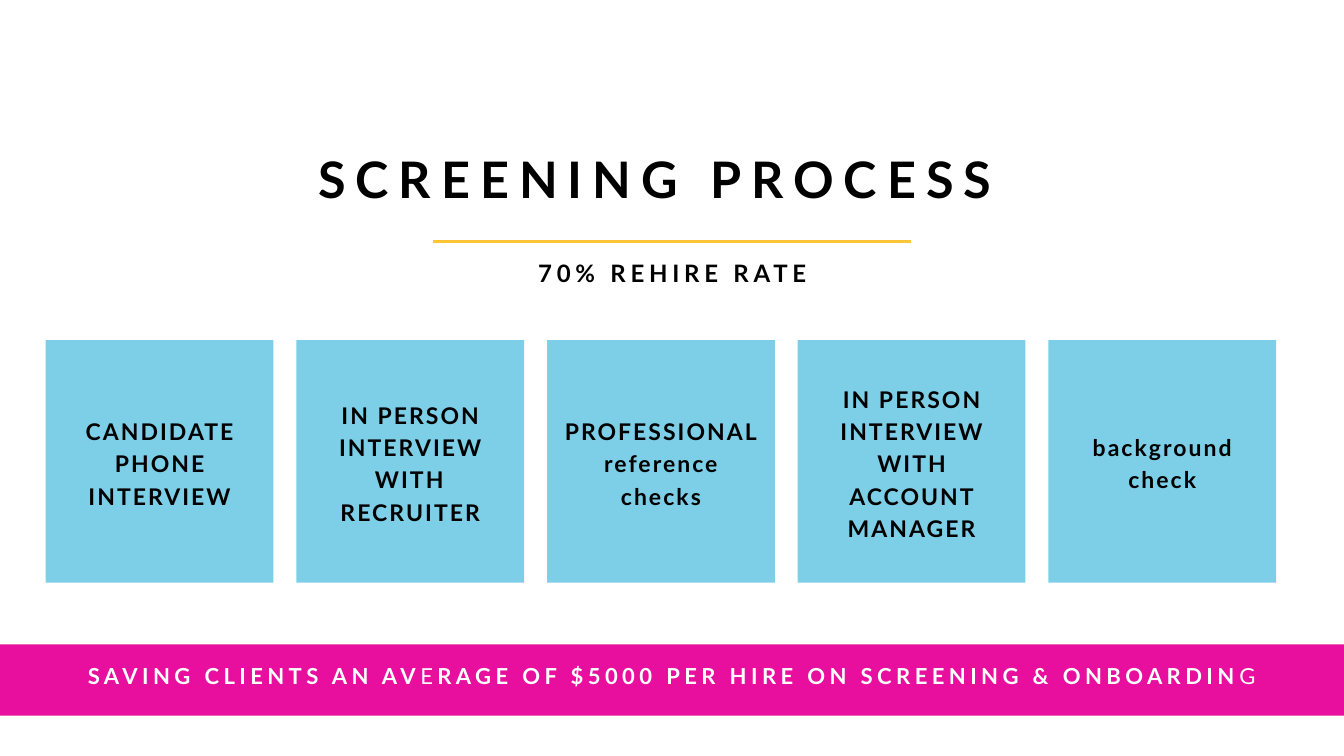
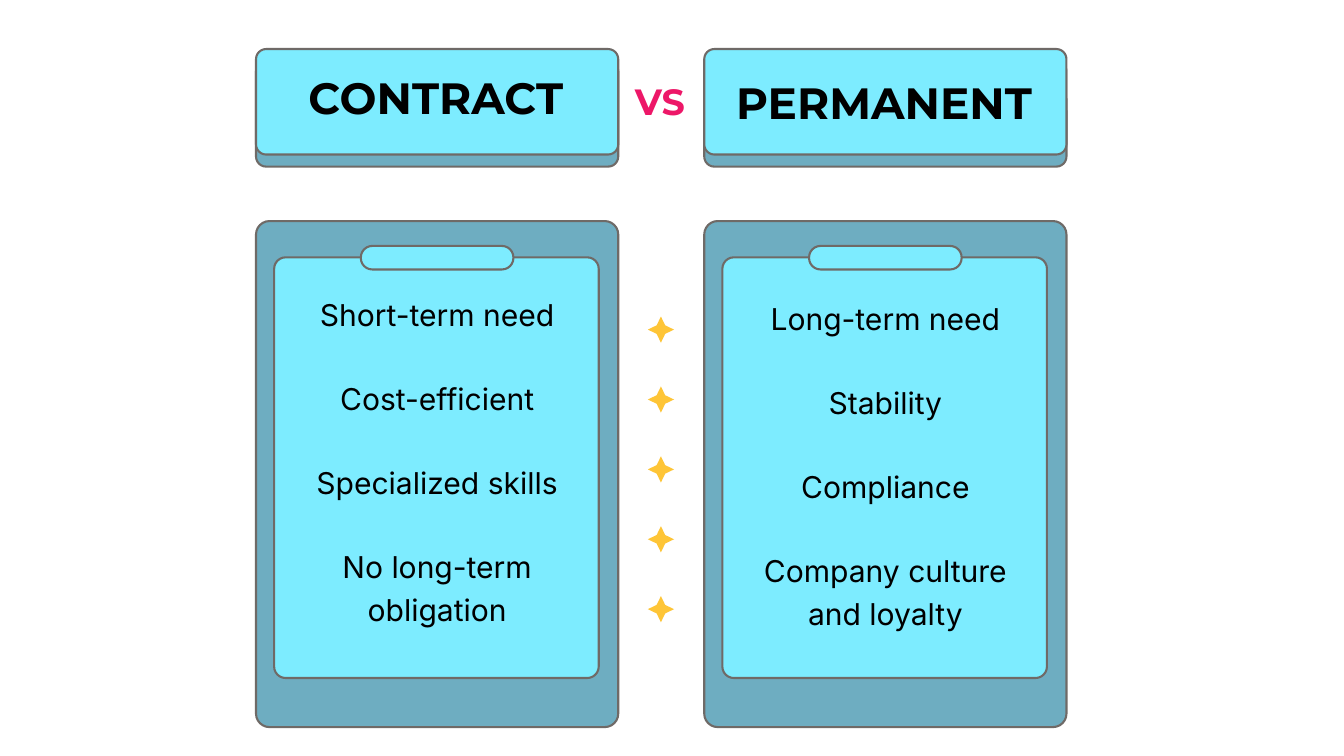
"""Build two recruiting slides: the screening process, and contract versus permanent hiring."""

from dataclasses import dataclass, replace

from lxml.etree import SubElement
from pptx import Presentation
from pptx.dml.color import RGBColor
from pptx.enum.shapes import MSO_CONNECTOR, MSO_SHAPE
from pptx.enum.text import MSO_ANCHOR, MSO_AUTO_SIZE, PP_ALIGN
from pptx.oxml.ns import qn
from pptx.presentation import Presentation as Deck
from pptx.shapes.autoshape import Shape
from pptx.slide import Slide
from pptx.text.text import TextFrame
from pptx.util import Inches, Pt

BLACK = RGBColor(0x00, 0x00, 0x00)
WHITE = RGBColor(0xFF, 0xFF, 0xFF)
CARD_BLUE = RGBColor(0x7D, 0xCE, 0xE7)
PANEL_BLUE = RGBColor(0x6E, 0xAD, 0xC1)
PAGE_CYAN = RGBColor(0x7D, 0xEC, 0xFF)
OUTLINE_GREY = RGBColor(0x6F, 0x6A, 0x67)
GOLD = RGBColor(0xFE, 0xC5, 0x37)
MAGENTA = RGBColor(0xE8, 0x0E, 0x9E)
VERSUS_PINK = RGBColor(0xED, 0x17, 0x68)

TITLE_SLIDE_LAYOUT = 0
COMPARISON_LAYOUT = 4


@dataclass(frozen=True)
class Box:
    """A position and size in inches."""

    left: float
    top: float
    width: float
    height: float


@dataclass(frozen=True)
class TextStyle:
    """Character and paragraph settings, with sizes in points."""

    font: str
    size: float
    line: float
    color: RGBColor = BLACK
    bold: bool = True
    tracking: float = 0
    gap: float = 0


@dataclass(frozen=True)
class Option:
    """One column of the comparison."""

    left: float
    heading: str
    heading_top: float
    points: tuple[str, ...]
    points_top: float


TITLE = TextStyle("Lato", 53.9, 75.4, tracking=10.8)
SUBTITLE = TextStyle("Lato", 25.7, 36, tracking=5.1)
STEP = TextStyle("Lato", 24.6, 34.5, tracking=2.2)
BANNER = TextStyle("Lato", 23.6, 33.1, WHITE, tracking=4.7)
HEADING = TextStyle("Montserrat", 46.9, 53.5)
VERSUS = TextStyle("Montserrat", 39.1, 44.5, VERSUS_PINK)
POINTS = TextStyle("Inter", 32.2, 45.1, bold=False, gap=45.1)

STEPS = (
    "CANDIDATE\nPHONE\nINTERVIEW",
    "IN PERSON\nINTERVIEW\nWITH RECRUITER",
    "PROFESSIONAL\nreference\nchecks",
    "IN PERSON\nINTERVIEW\nWITH\nACCOUNT\nMANAGER",
    "background\ncheck",
)
BANNER_PARTS = (
    ("SAVING CLIENTS AN AV", True),
    ("E", False),
    ("RAGE OF $5000 PER HIRE ON SCREENING & ONBOARDIN", True),
    ("G", False),
)
OPTIONS = (
    Option(
        3.81, "CONTRACT", 1.09,
        ("Short-term need", "Cost-efficient", "Specialized skills", "No long-term obligation"),
        4.32,
    ),
    Option(
        10.48, "PERMANENT", 1.17,
        ("Long-term need", "Stability", "Compliance", "Company culture and loyalty"),
        4.38,
    ),
)
STAR_COUNT = 5


def place(shape: Shape, box: Box) -> None:
    """Move and size a shape."""
    shape.left, shape.top = Inches(box.left), Inches(box.top)
    shape.width, shape.height = Inches(box.width), Inches(box.height)


def format_run(run, style: TextStyle) -> None:
    """Apply the character settings of a style."""
    run.font.name = style.font
    run.font.size = Pt(style.size)
    run.font.bold = style.bold
    run.font.color.rgb = style.color
    run._r.get_or_add_rPr().set("spc", str(round(style.tracking * 100)))


def format_text(
    text_frame: TextFrame, style: TextStyle, anchor: MSO_ANCHOR = MSO_ANCHOR.TOP, inset: float = 0
) -> None:
    """Centre the text of a frame and apply a style to it."""
    text_frame.word_wrap = True
    text_frame.auto_size = MSO_AUTO_SIZE.NONE
    text_frame.vertical_anchor = anchor
    text_frame.margin_left = text_frame.margin_right = Inches(inset)
    text_frame.margin_top = text_frame.margin_bottom = Inches(inset)
    for index, paragraph in enumerate(text_frame.paragraphs):
        paragraph.alignment = PP_ALIGN.CENTER
        paragraph.line_spacing = Pt(style.line)
        paragraph.space_before = Pt(style.gap if index else 0)
        paragraph.space_after = Pt(0)
        for run in paragraph.runs:
            format_run(run, style)


def fill_placeholder(slide: Slide, index: int, text: str, box: Box, style: TextStyle) -> None:
    """Fill a placeholder, move it and bring it to the front without bullets."""
    placeholder = slide.placeholders[index]
    place(placeholder, box)
    placeholder.text_frame.text = text
    format_text(placeholder.text_frame, style)
    for paragraph in placeholder.text_frame.paragraphs:
        properties = paragraph._p.get_or_add_pPr()
        properties.set("marL", "0")
        properties.set("indent", "0")
        SubElement(properties, qn("a:buNone"))
    placeholder.element.getparent().append(placeholder.element)


def add_block(
    slide: Slide, kind: MSO_SHAPE, box: Box, fill: RGBColor, outline: RGBColor | None = None
) -> Shape:
    """Add a flat preset shape."""
    shape = slide.shapes.add_shape(kind, 0, 0, 0, 0)
    place(shape, box)
    shape.shadow.inherit = False
    shape.fill.solid()
    shape.fill.fore_color.rgb = fill
    if outline is None:
        shape.line.fill.background()
    else:
        shape.line.color.rgb = outline
        shape.line.width = Pt(2.25)
    return shape


def add_rounded(slide: Slide, box: Box, fill: RGBColor, radius: float) -> None:
    """Add an outlined rectangle with a corner radius in inches."""
    shape = add_block(slide, MSO_SHAPE.ROUNDED_RECTANGLE, box, fill, OUTLINE_GREY)
    shape.adjustments[0] = radius / min(box.width, box.height)


def add_rule(slide: Slide, left: float, right: float, top: float) -> None:
    """Add the gold rule below the title."""
    rule = slide.shapes.add_connector(
        MSO_CONNECTOR.STRAIGHT, Inches(left), Inches(top), Inches(right), Inches(top)
    )
    rule.line.color.rgb = GOLD
    rule.line.width = Pt(3)
    SubElement(rule.element.spPr, qn("a:effectLst"))


def add_banner(slide: Slide) -> None:
    """Add the magenta band with its savings message."""
    add_block(slide, MSO_SHAPE.RECTANGLE, Box(-0.49, 9.59, 20.97, 1.06), MAGENTA)
    message = slide.shapes.add_textbox(0, 0, 0, 0)
    place(message, Box(-0.49, 9.39, 20.97, 1.26))
    paragraph = message.text_frame.paragraphs[0]
    for text, _ in BANNER_PARTS:
        paragraph.add_run().text = text
    format_text(message.text_frame, BANNER, MSO_ANCHOR.MIDDLE, 0.06)
    for run, (_, bold) in zip(paragraph.runs, BANNER_PARTS):
        format_run(run, replace(BANNER, bold=bold))


def build_screening_slide(presentation: Deck) -> None:
    """Build the slide with the five screening steps."""
    slide = presentation.slides.add_slide(presentation.slide_layouts[TITLE_SLIDE_LAYOUT])
    for index, step in enumerate(STEPS):
        box = Box(0.68 + 3.73 * index, 5.06, 3.39, 3.61)
        card = add_block(slide, MSO_SHAPE.RECTANGLE, box, CARD_BLUE)
        card.text_frame.text = step
        format_text(card.text_frame, STEP, MSO_ANCHOR.MIDDLE, 0.14)
    add_rule(slide, 6.45, 13.55, 3.59)
    add_banner(slide)
    fill_placeholder(slide, 0, "SCREENING PROCESS", Box(3.84, 2.06, 11.82, 0.99), TITLE)
    fill_placeholder(slide, 1, "70% REHIRE RATE", Box(7.77, 3.78, 4.47, 0.49), SUBTITLE)


def add_option(slide: Slide, option: Option, heading_index: int) -> None:
    """Add a heading button and a clipboard with the points of one option."""
    left = option.left
    add_rounded(slide, Box(left, 3.29, 5.39, 7.53), PANEL_BLUE, 0.2)
    add_rounded(slide, Box(left + 0.27, 3.83, 4.83, 6.26), PAGE_CYAN, 0.17)
    add_rounded(slide, Box(left + 1.56, 3.66, 2.27, 0.35), PAGE_CYAN, 0.17)
    for top, fill in ((0.91, PANEL_BLUE), (0.73, PAGE_CYAN)):
        add_rounded(slide, Box(left, top, 5.39, 1.57), fill, 0.15)
    heading_box = Box(left + 0.26, option.heading_top, 4.83, 0.75)
    fill_placeholder(slide, heading_index, option.heading, heading_box, HEADING)
    points_box = Box(left + 0.71, option.points_top, 3.97, 4.9)
    fill_placeholder(slide, heading_index + 1, "\n".join(option.points), points_box, POINTS)


def build_comparison_slide(presentation: Deck) -> None:
    """Build the slide that sets contract against permanent hiring."""
    slide = presentation.slides.add_slide(presentation.slide_layouts[COMPARISON_LAYOUT])
    for index, option in enumerate(OPTIONS):
        add_option(slide, option, 1 + 2 * index)
    for index in range(STAR_COUNT):
        box = Box(9.64, 4.71 + 1.04 * index, 0.39, 0.39)
        star = add_block(slide, MSO_SHAPE.STAR_4_POINT, box, GOLD)
        star.adjustments[0] = 0.23
    fill_placeholder(slide, 0, "VS", Box(9.23, 1.21, 1.18, 0.63), VERSUS)


def main() -> None:
    """Create and save the presentation."""
    presentation = Presentation()
    presentation.slide_width = Inches(20)
    presentation.slide_height = Inches(11.25)
    build_screening_slide(presentation)
    build_comparison_slide(presentation)
    presentation.save("out.pptx")


if __name__ == "__main__":
    main()
